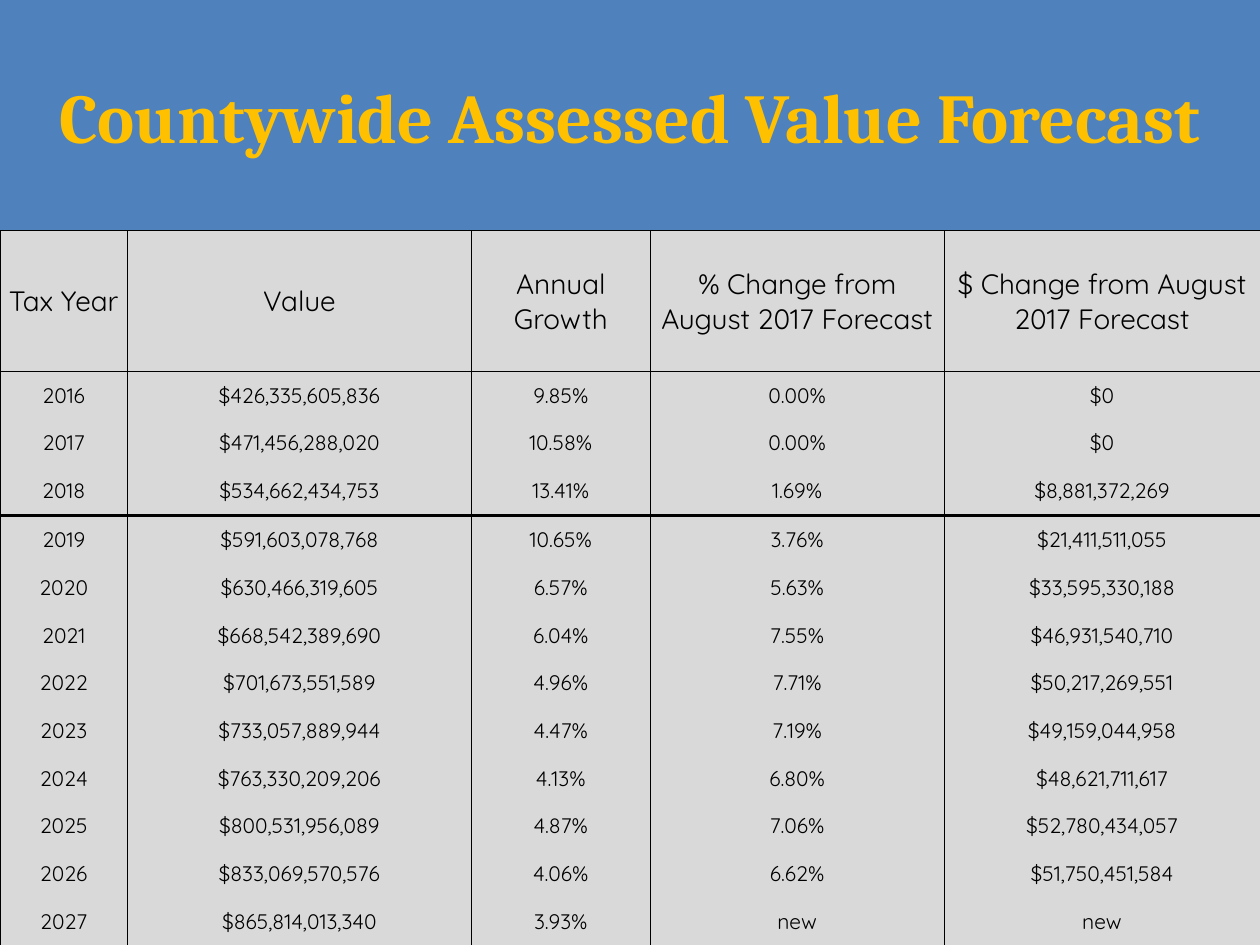
from collections import namedtuple
from dataclasses import dataclass

from lxml.etree import SubElement
from pptx import Presentation
from pptx.dml.color import RGBColor
from pptx.enum.shapes import MSO_SHAPE as Shape
from pptx.enum.text import MSO_ANCHOR as Anchor, PP_ALIGN as Align
from pptx.oxml.ns import qn
from pptx.util import Cm, Pt

Box = namedtuple("Box", "left top width height")


@dataclass(frozen=True)
class Theme:
    """Colours, fonts and point sizes of the slide."""
    banner: str = "4F81BD"
    title: str = "FFC000"
    cell: str = "D9D9D9"
    ink: str = "000000"
    title_font: str = "Cambria"
    table_font: str = "Quicksand"
    title_size: float = 40
    header_size: float = 16
    body_size: float = 12
    thin: float = 0.5
    thick: float = 2


THEME = Theme()
PAGE = Box(0, 0, 25.4, 19.05)
BANNER_HEIGHT = 4.65
NO_GRID_STYLE = "{2D5ABB26-0587-4C30-8999-92F81FD0307C}"
COLUMN_WIDTHS = [2.57, 6.93, 3.61, 5.92, 6.37]
ROW_HEIGHT = 0.96
DIVIDER_ROW_HEIGHT = 0.98
LAST_CERTIFIED_YEAR = "2018"
HEADERS = [
    "Tax Year", "Value", "Annual Growth",
    "% Change from August 2017 Forecast", "$ Change from August 2017 Forecast",
]
FORECAST = [
    ["2016", "$426,335,605,836", "9.85%", "0.00%", "$0"],
    ["2017", "$471,456,288,020", "10.58%", "0.00%", "$0"],
    ["2018", "$534,662,434,753", "13.41%", "1.69%", "$8,881,372,269"],
    ["2019", "$591,603,078,768", "10.65%", "3.76%", "$21,411,511,055"],
    ["2020", "$630,466,319,605", "6.57%", "5.63%", "$33,595,330,188"],
    ["2021", "$668,542,389,690", "6.04%", "7.55%", "$46,931,540,710"],
    ["2022", "$701,673,551,589", "4.96%", "7.71%", "$50,217,269,551"],
    ["2023", "$733,057,889,944", "4.47%", "7.19%", "$49,159,044,958"],
    ["2024", "$763,330,209,206", "4.13%", "6.80%", "$48,621,711,617"],
    ["2025", "$800,531,956,089", "4.87%", "7.06%", "$52,780,434,057"],
    ["2026", "$833,069,570,576", "4.06%", "6.62%", "$51,750,451,584"],
    ["2027", "$865,814,013,340", "3.93%", "new", "new"],
]


def write_text(frame, text, *, font, size, color, bold=False):
    """Put one centred, formatted paragraph in a text frame."""
    frame.word_wrap = True
    para = frame.paragraphs[0]
    para.alignment = Align.CENTER
    span = para.add_run()
    span.text = text
    span.font.name = font
    span.font.size = Pt(size)
    span.font.bold = bold
    span.font.color.rgb = RGBColor.from_string(color)


def add_banner(page, box, text):
    """Draw the coloured band that carries the slide title."""
    banner = page.shapes.add_shape(Shape.RECTANGLE, *map(Cm, box))
    banner.shadow.inherit = False
    banner.fill.solid()
    banner.fill.fore_color.rgb = RGBColor.from_string(THEME.banner)
    banner.line.fill.background()
    banner.text_frame.vertical_anchor = Anchor.MIDDLE
    write_text(banner.text_frame, text, font=THEME.title_font,
               size=THEME.title_size, color=THEME.title, bold=True)


def set_borders(cell, **widths):
    """Give each side of a cell a line of the given points, or none for 0."""
    properties = cell._tc.get_or_add_tcPr()
    for side in "LRTB":
        width = widths[side]
        line = SubElement(properties, qn(f"a:ln{side}"), w=str(Pt(width)))
        if width:
            fill = SubElement(line, qn("a:solidFill"))
            SubElement(fill, qn("a:srgbClr"), val=THEME.ink)
        else:
            SubElement(line, qn("a:noFill"))


def fill_cell(cell, text, size, above, below):
    """Write and style one table cell."""
    cell.margin_left = cell.margin_right = cell.margin_top = cell.margin_bottom = 0
    cell.vertical_anchor = Anchor.MIDDLE
    set_borders(cell, L=THEME.thin, R=THEME.thin, T=above, B=below)
    cell.fill.solid()
    cell.fill.fore_color.rgb = RGBColor.from_string(THEME.cell)
    write_text(cell.text_frame, text, font=THEME.table_font, size=size, color=THEME.ink)


def add_forecast_table(page, box, headers, records):
    """Draw the forecast table, with a heavy rule after the last certified year."""
    rows = [headers, *records]
    divider = [row[0] for row in rows].index(LAST_CERTIFIED_YEAR)
    heights = [DIVIDER_ROW_HEIGHT if index in (divider, divider + 1) else ROW_HEIGHT
               for index in range(len(rows))]
    heights[0] = box.height - sum(heights[1:])
    rules = [0] * (len(rows) + 1)
    rules[0] = rules[1] = rules[-1] = THEME.thin
    rules[divider + 1] = THEME.thick

    table = page.shapes.add_table(len(rows), len(headers), *map(Cm, box)).table
    table._tbl.tblPr.find(qn("a:tableStyleId")).text = NO_GRID_STYLE
    table.horz_banding = False
    for column, width in zip(table.columns, COLUMN_WIDTHS):
        column.width = Cm(width)
    for index, values in enumerate(rows):
        table.rows[index].height = Cm(heights[index])
        size = THEME.body_size if index else THEME.header_size
        for cell, text in zip(table.rows[index].cells, values):
            fill_cell(cell, text, size, rules[index], rules[index + 1])


def main():
    """Build the one-slide deck and save it."""
    deck = Presentation()
    deck.slide_width, deck.slide_height = Cm(PAGE.width), Cm(PAGE.height)
    page = deck.slides.add_slide(deck.slide_layouts[6])
    add_banner(page, PAGE._replace(height=BANNER_HEIGHT),
               "Countywide Assessed Value Forecast")
    table_box = PAGE._replace(top=BANNER_HEIGHT, height=PAGE.height - BANNER_HEIGHT)
    add_forecast_table(page, table_box, HEADERS, FORECAST)
    deck.save("out.pptx")


if __name__ == "__main__":
    main()
